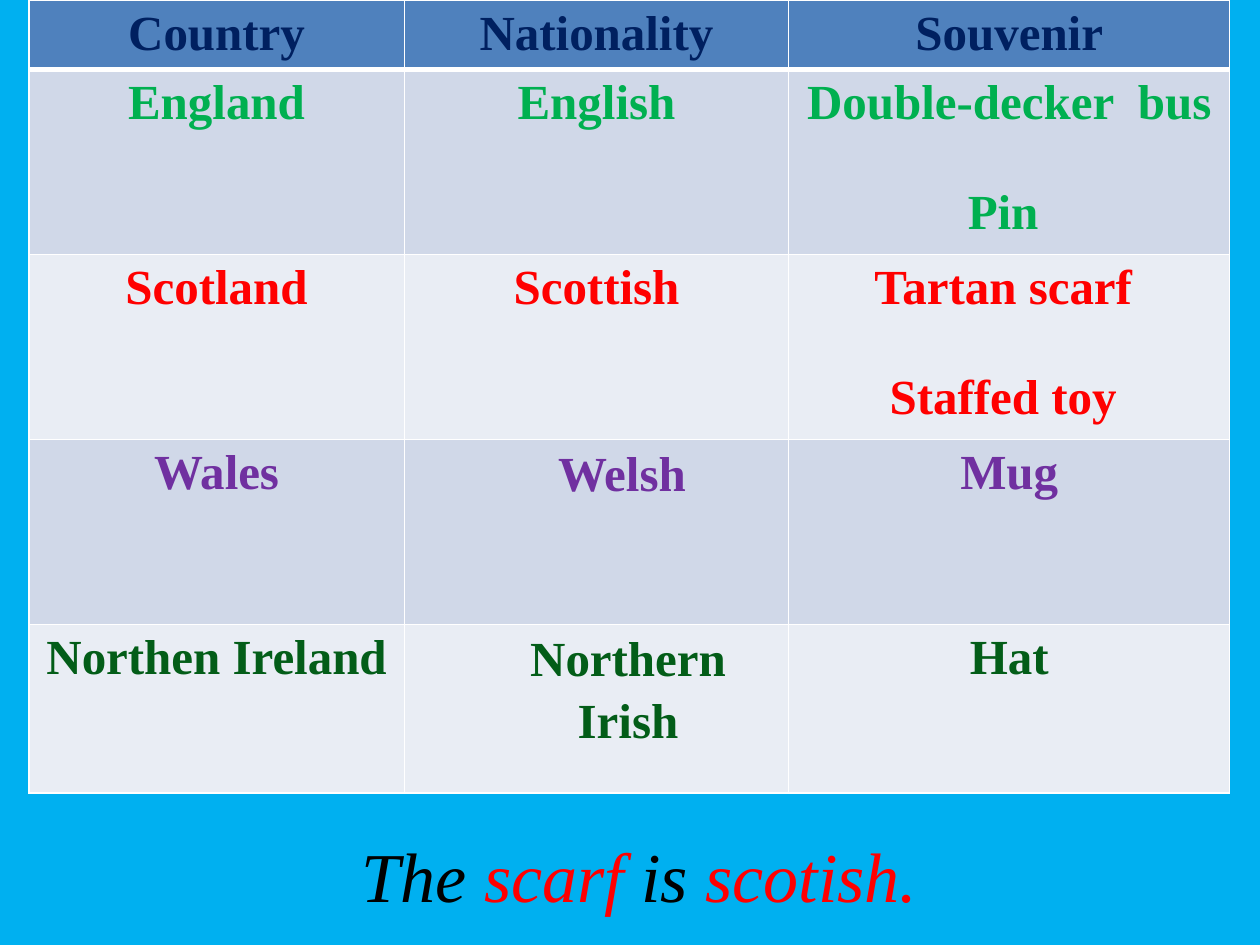
from lxml import etree
from pptx import Presentation
from pptx.dml.color import RGBColor
from pptx.enum.text import MSO_AUTO_SIZE, PP_ALIGN
from pptx.oxml.ns import qn
from pptx.util import Cm, Pt

CENTER = PP_ALIGN.CENTER
FIT_SHAPE = MSO_AUTO_SIZE.SHAPE_TO_FIT_TEXT
FONT = "Times New Roman"

SKY = RGBColor(0x00, 0xB0, 0xF0)
WHITE = RGBColor(0xFF, 0xFF, 0xFF)
BLACK = RGBColor(0x00, 0x00, 0x00)
NAVY = RGBColor(0x00, 0x20, 0x60)
GREEN = RGBColor(0x00, 0xB0, 0x50)
RED = RGBColor(0xFF, 0x00, 0x00)
PURPLE = RGBColor(0x70, 0x30, 0xA0)
DARK_GREEN = RGBColor(0x03, 0x5D, 0x18)
HEADER_FILL = RGBColor(0x4F, 0x81, 0xBD)
ODD_FILL = RGBColor(0xD0, 0xD8, 0xE8)
EVEN_FILL = RGBColor(0xE9, 0xED, 0xF4)

COLUMN_WIDTHS = [7.57, 7.75, 8.89]
# height in cm, fill, text colour, paragraphs of each cell
ROWS = [
    (1.4, HEADER_FILL, NAVY, [["Country"], ["Nationality"], ["Souvenir"]]),
    (3.73, ODD_FILL, GREEN, [["England"], ["English"], ["Double-decker  bus", "Pin "]]),
    (3.73, EVEN_FILL, RED, [["Scotland"], ["Scottish"], ["Tartan scarf ", "Staffed toy "]]),
    (3.73, ODD_FILL, PURPLE, [["Wales"], ["Welsh "], ["Mug"]]),
    (3.4, EVEN_FILL, DARK_GREEN, [["Northen Ireland"], ["Northern Irish"], ["Hat"]]),
]
INDENTED_CELLS = {(3, 1), (4, 1)}
INDENTED_MARGINS = {
    "margin_left": Cm(0.18),
    "margin_right": Cm(0.18),
    "margin_top": 0,
    "margin_bottom": 0,
}
SENTENCE = [("The ", BLACK), ("scarf", RED), (" is ", BLACK), ("scotish.", RED)]


def add_run(paragraph, text, color, font_values):
    run = paragraph.add_run()
    run.text = text
    run.font.color.rgb = color
    for name, value in font_values.items():
        setattr(run.font, name, value)


def add_borders(cell, widths):
    """Draw white cell borders; widths maps a:ln tags, in schema order, to points."""
    properties = cell._tc.get_or_add_tcPr()
    for tag, width in widths.items():
        line = etree.SubElement(properties, qn(tag), w=str(Pt(width)))
        fill = etree.SubElement(line, qn("a:solidFill"))
        etree.SubElement(fill, qn("a:srgbClr"), val=str(WHITE))


presentation = Presentation()
presentation.slide_width = Cm(25.4)
presentation.slide_height = Cm(19.05)
slide = presentation.slides.add_slide(presentation.slide_layouts[6])
slide.background.fill.solid()
slide.background.fill.fore_color.rgb = SKY

# Souvenir table
table = slide.shapes.add_table(
    len(ROWS), len(COLUMN_WIDTHS), Cm(0.58), Cm(0),
    Cm(sum(COLUMN_WIDTHS)), Cm(sum(row[0] for row in ROWS)),
).table
for column, width in zip(table.columns, COLUMN_WIDTHS):
    column.width = Cm(width)

cell_font = {"name": FONT, "size": Pt(28), "bold": True}
for row_index, (height, fill_color, text_color, cell_texts) in enumerate(ROWS):
    table.rows[row_index].height = Cm(height)
    borders = {
        "a:lnL": 1,
        "a:lnR": 1,
        "a:lnT": 3 if row_index == 1 else 1,
        "a:lnB": 3 if row_index == 0 else 1,
    }
    for column_index, texts in enumerate(cell_texts):
        cell = table.cell(row_index, column_index)
        add_borders(cell, borders)
        cell.fill.solid()
        cell.fill.fore_color.rgb = fill_color
        for text_index, text in enumerate(texts):
            if text_index == 0:
                paragraph = cell.text_frame.paragraphs[0]
            else:
                paragraph = cell.text_frame.add_paragraph()
                paragraph.space_before = Pt(32)
            paragraph.alignment = CENTER
            add_run(paragraph, text, text_color, cell_font)
        if (row_index, column_index) in INDENTED_CELLS:
            for name, value in INDENTED_MARGINS.items():
                setattr(cell, name, value)
            paragraph.line_spacing = 1.15
            paragraph._p.get_or_add_pPr().set("marL", str(Cm(1.27)))

# Example sentence
sentence_box = slide.shapes.add_textbox(Cm(2.77), Cm(16.66), Cm(20.24), Cm(1.96))
sentence_box.text_frame.word_wrap = True
sentence_box.text_frame.auto_size = FIT_SHAPE
paragraph = sentence_box.text_frame.paragraphs[0]
paragraph.alignment = CENTER
sentence_font = {"name": FONT, "size": Pt(40), "italic": True}
for text, color in SENTENCE:
    add_run(paragraph, text, color, sentence_font)

presentation.save("out.pptx")
